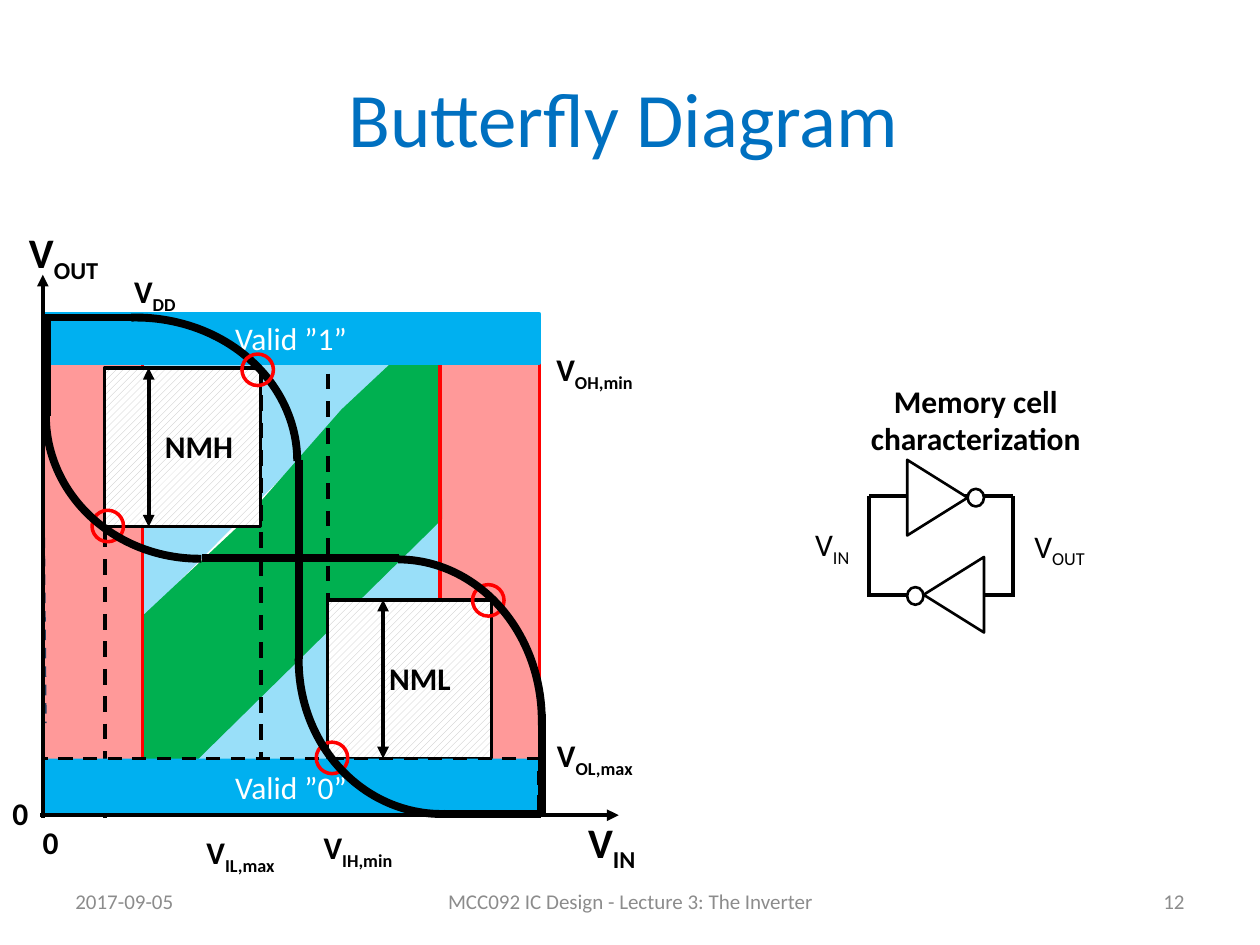
from lxml import etree
from pptx import Presentation
from pptx.dml.color import RGBColor
from pptx.enum.dml import MSO_LINE, MSO_PATTERN
from pptx.enum.shapes import MSO_CONNECTOR, MSO_SHAPE
from pptx.enum.text import MSO_ANCHOR, PP_ALIGN
from pptx.oxml.ns import qn
from pptx.util import Inches, Pt

BLACK = RGBColor(0x00, 0x00, 0x00)
WHITE = RGBColor(0xFF, 0xFF, 0xFF)
RED = RGBColor(0xFF, 0x00, 0x00)
BLUE = RGBColor(0x00, 0xB0, 0xF0)
GREEN = RGBColor(0x00, 0xB0, 0x50)
NAVY = RGBColor(0x25, 0x40, 0x61)
GREY = RGBColor(0x8C, 0x8C, 0x8C)
HATCH = RGBColor(0xBF, 0xBF, 0xBF)
TITLE_BLUE = RGBColor(0x00, 0x70, 0xC0)
LEFT, CENTER, RIGHT = PP_ALIGN.LEFT, PP_ALIGN.CENTER, PP_ALIGN.RIGHT
TOP, MIDDLE = MSO_ANCHOR.TOP, MSO_ANCHOR.MIDDLE

deck = Presentation()
deck.slide_width, deck.slide_height = Inches(10), Inches(7.5)
page = deck.slides.add_slide(deck.slide_layouts[6])


def add_line(start, end, width=2.25, color=BLACK, dashed=False, arrows=()):
    """Draw a straight line; arrows names the ends ("head", "tail") with a triangle."""
    line = page.shapes.add_connector(
        MSO_CONNECTOR.STRAIGHT, *(Inches(value) for value in start + end))
    line.line.color.rgb = color
    line.line.width = Pt(width)
    if dashed:
        line.line.dash_style = MSO_LINE.DASH
    properties = line.element.spPr
    for arrow in arrows:
        etree.SubElement(properties.find(qn("a:ln")), qn(f"a:{arrow}End"), type="triangle")
    etree.SubElement(properties, qn("a:effectLst"))


def add_shape(kind, at, fill=None, line=BLACK, width=2, rotation=0, flip=False):
    shape = page.shapes.add_shape(kind, *(Inches(value) for value in at))
    shape.shadow.inherit = False
    shape.rotation = rotation
    if flip:
        shape.element.spPr.find(qn("a:xfrm")).set("flipV", "1")
    if fill is None:
        shape.fill.background()
    else:
        shape.fill.solid()
        shape.fill.fore_color.rgb = fill
    shape.line.color.rgb = line
    shape.line.width = Pt(width)
    return shape


# Transition regions between the valid input ranges
translucent = []
regions = [
    (BLUE, [(1.13, 6.46), (3.49, 4.11), (3.49, 6.46)]),
    (BLUE, [(3.49, 2.52), (1.12, 4.92), (1.13, 2.52)]),
    (GREEN, [(1.14, 4.88), (1.92, 4.15), (2.71, 3.25), (3.49, 2.52), (3.51, 4.12),
             (1.13, 6.46)]),
]
for color, points in regions:
    corners = [(Inches(x), Inches(y)) for x, y in points]
    builder = page.shapes.build_freeform(*corners[0], scale=1.0)
    builder.add_line_segments(corners[1:], close=True)
    region = builder.convert_to_shape()
    region.shadow.inherit = False
    region.fill.solid()
    region.fill.fore_color.rgb = color
    region.line.fill.background()
    if color == BLUE:
        translucent.append(region)

for left, top in [(3.49, 2.52), (0.34, 2.53)]:
    translucent.append(add_shape(MSO_SHAPE.RECTANGLE, (left, top, 0.79, 3.94), RED, RED))
for shape in translucent:
    color = shape.element.spPr.find(qn("a:solidFill"))[0]
    etree.SubElement(color, qn("a:alpha"), val="40000")

for x, top, bottom in [(2.6, 2.53, 6.47), (2.07, 2.92, 6.47), (3.9, 4.77, 6.47),
                       (0.83, 4.22, 6.49)]:
    add_line((x, top), (x, bottom), dashed=True)
add_line((0.34, 3.39), (0.36, 5.74), 1.5, NAVY, dashed=True)

# Noise margins
for at, rotation, x, top, bottom in [((0.83, 2.92, 1.24, 1.26), 0, 1.18, 2.92, 4.18),
                                     ((2.62, 4.74, 1.26, 1.3), 270, 3.04, 4.76, 6.02)]:
    margin = add_shape(MSO_SHAPE.RECTANGLE, at, rotation=rotation)
    margin.fill.patterned()
    margin.fill.pattern = MSO_PATTERN.WIDE_UPWARD_DIAGONAL
    margin.fill.fore_color.rgb = HATCH
    margin.fill.back_color.rgb = WHITE
    add_line((x, bottom), (x, top), arrows=("head", "tail"))

for left, top in [(0.73, 4.05), (3.75, 4.64)]:
    add_shape(MSO_SHAPE.OVAL, (left, top, 0.25, 0.25), line=RED, rotation=270, flip=True)

zero_band = add_shape(MSO_SHAPE.RECTANGLE, (0.34, 6.02, 3.94, 0.45), BLUE)
zero_band.line.dash_style = MSO_LINE.DASH
one_band = add_shape(MSO_SHAPE.RECTANGLE, (0.34, 2.49, 3.94, 0.39), BLUE, BLUE)

add_shape(MSO_SHAPE.OVAL, (2.51, 5.89, 0.25, 0.25), line=RED)
add_line((0.32, 6.47), (4.91, 6.47), arrows=("tail",))

# Transfer curve and its mirror image
for start, end in [((1.13, 2.52), (0.34, 2.52)), ((2.37, 3.65), (2.37, 5.23)),
                   ((4.29, 6.46), (3.5, 6.46)), ((4.3, 5.67), (4.3, 6.46)),
                   ((3.17, 4.43), (1.6, 4.43)), ((0.37, 2.51), (0.37, 3.3))]:
    add_line(start, end, 4.5)
for at, rotation, flip, angles in [
    ((-0.2, 2.52, 2.56, 2.28), 0, False, (160.87, 0)),
    ((2.37, 4.02, 2.27, 2.44), 180, False, (161.3, 0.42)),
    ((1.88, 4.58, 2.56, 2.28), 270, True, (160.87, 0)),
    ((0.45, 2.08, 2.27, 2.44), 90, True, (161.3, 0.42)),
]:
    arc = add_shape(MSO_SHAPE.ARC, at, width=4.5, rotation=rotation, flip=flip)
    arc.adjustments[0], arc.adjustments[1] = angles
add_shape(MSO_SHAPE.OVAL, (1.92, 2.81, 0.25, 0.25), line=RED)
add_line((0.34, 2.18), (0.34, 6.49), arrows=("head",))

# Memory cell: two cross-coupled inverters
for y in (4.72, 3.94):
    add_line((8.04, y), (6.9, y))
for x in (8.04, 6.9):
    add_line((x, 3.94), (x, 4.74))
for gate, bubble, rotation in [((7.27, 4.48), (7.2, 4.66), 270),
                               ((7.14, 3.71), (7.68, 3.88), 90)]:
    add_shape(MSO_SHAPE.ISOSCELES_TRIANGLE, gate + (0.6, 0.48), WHITE, width=1.5,
              rotation=rotation)
    add_shape(MSO_SHAPE.OVAL, bubble + (0.13, 0.14), WHITE, width=1.5)

# Text: place, main text, subscript, alignment, anchor, font
bold = {"size": Pt(18), "bold": True, "color": BLACK}
plain = {**bold, "bold": False}
axis = {**bold, "size": Pt(24)}
band = {**plain, "color": WHITE}
footer = {"size": Pt(12), "bold": False, "color": GREY}
heading = {"size": Pt(44), "bold": False, "color": TITLE_BLUE}
texts = [
    ((0.45, 0.3, 9, 1.25), "Butterfly Diagram", "", CENTER, MIDDLE, heading),
    ((0.5, 6.95, 2.33, 0.4), "2017-09-05", "", LEFT, MIDDLE, footer),
    ((3.42, 6.95, 3.17, 0.4), "MCC092 IC Design - Lecture 3: The Inverter", "", CENTER,
     MIDDLE, footer),
    ((7.17, 6.95, 2.33, 0.4), "12", "", RIGHT, MIDDLE, footer),
    ((0.9, 2.11, 0.66, 0.4), "V", "DD", CENTER, TOP, bold),
    ((0.24, 6.48, 0.66, 0.4), "0", "", LEFT, TOP, bold),
    ((0, 6.25, 0.66, 0.4), "0", "", LEFT, TOP, bold),
    ((2.47, 6.52, 1.2, 0.4), "V", "IH,min", LEFT, TOP, bold),
    ((1.54, 6.56, 1.06, 0.4), "V", "IL,max", LEFT, TOP, bold),
    ((4.43, 6.43, 0.85, 0.5), "V", "IN", CENTER, TOP, axis),
    ((0.08, 1.75, 0.85, 0.5), "V", "OUT", CENTER, TOP, axis),
    ((4.21, 5.79, 0.91, 0.4), "V", "OL,max", RIGHT, TOP, bold),
    ((4.21, 2.73, 0.91, 0.4), "V", "OH,min", RIGHT, TOP, bold),
    ((1.21, 3.34, 0.86, 0.42), "NMH", "", LEFT, TOP, bold),
    ((2.99, 5.18, 0.91, 0.42), "NML", "", LEFT, TOP, bold),
    (zero_band, "Valid ”0”", "", CENTER, MIDDLE, band),
    (one_band, "Valid ”1”", "", CENTER, MIDDLE, band),
    ((6.29, 4.12, 0.63, 0.4), "V", "IN", CENTER, TOP, plain),
    ((8.08, 4.13, 0.66, 0.4), "V", "OUT", CENTER, TOP, plain),
    ((6.56, 2.98, 2.37, 0.71), "Memory cell characterization", "", CENTER, TOP, bold),
]
for place, main, subscript, alignment, anchor, font in texts:
    box = place
    if isinstance(place, tuple):
        box = page.shapes.add_textbox(*(Inches(value) for value in place))
    frame = box.text_frame
    frame.word_wrap = True
    frame.vertical_anchor = anchor
    para = frame.paragraphs[0]
    para.alignment = alignment
    for words, baseline in [(main, None), (subscript, "-25000")]:
        if not words:
            continue
        span = para.add_run()
        span.text = words
        span.font.name = "Calibri"
        span.font.color.rgb = font["color"]
        for name in ("size", "bold"):
            setattr(span.font, name, font[name])
        if baseline:
            span.font._element.set("baseline", baseline)

deck.save("out.pptx")
